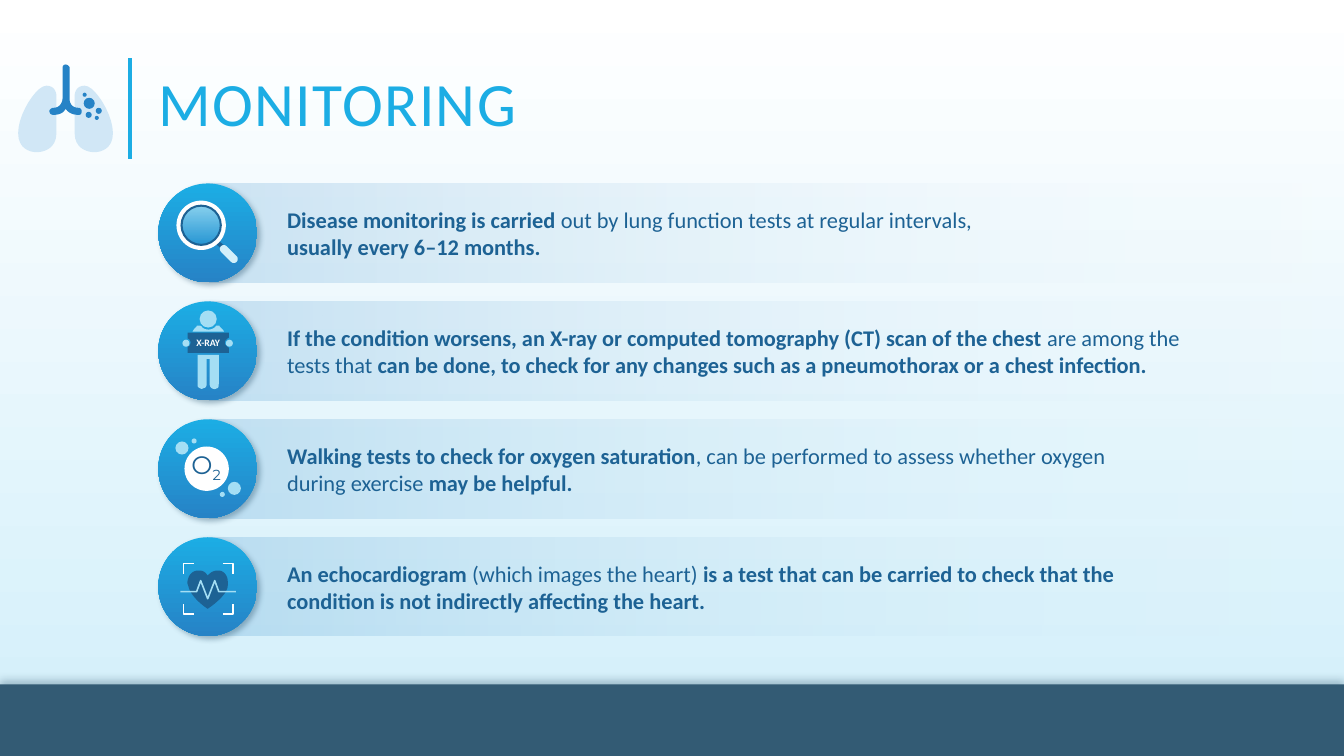
import lxml.etree
import pptx
import pptx.dml.color
import pptx.enum.shapes
import pptx.enum.text
import pptx.oxml.ns
import pptx.util

RGBColor = pptx.dml.color.RGBColor
Inches = pptx.util.Inches
Pt = pptx.util.Pt
KIND = pptx.enum.shapes.MSO_SHAPE
ALIGN = pptx.enum.text.PP_ALIGN
qn = pptx.oxml.ns.qn

WHITE = RGBColor(0xFF, 0xFF, 0xFF)
PALE = RGBColor(0xD2, 0xEF, 0xFA)
MIST = RGBColor(0xD1, 0xE7, 0xF6)
LIGHT = RGBColor(0xA4, 0xDE, 0xF4)
CYAN = RGBColor(0x1C, 0xAD, 0xE4)
BLUE = RGBColor(0x26, 0x83, 0xC6)
NAVY = RGBColor(0x1D, 0x62, 0x94)
SLATE = RGBColor(0x33, 0x5B, 0x74)

TITLE = "MONITORING"
ROWS = [
    (7.07, ["Disease monitoring is carried ",
            "out by lung function tests at regular intervals, ",
            "usually every 6–12 months."]),
    (9.46, ["If the condition worsens, an X-ray or computed tomography (CT) scan of the chest ",
            "are among the tests that",
            " can be done, to check for any changes such as a pneumothorax or a chest infection."]),
    (8.33, ["Walking tests to check for oxygen saturation",
            ", can be performed to assess whether oxygen during exercise ",
            "may be helpful."]),
    (8.98, ["An echocardiogram ",
            "(which images the heart) ",
            "is a test that can be carried to check that the condition is not indirectly affecting the heart."]),
]

LUNG = [(0.56, 0.95), (0.56, 0.95, 0.56, 0.85, 0.46, 0.85), (0.36, 0.85, 0.18, 1.13, 0.18, 1.32),
        (0.18, 1.52, 0.37, 1.51, 0.37, 1.51), (0.37, 1.51, 0.56, 1.51, 0.56, 1.32)]
PIPE = [(0.53, 1.07), (0.61, 1.07, 0.62, 0.99, 0.62, 0.98), (0.62, 0.67),
        (0.62, 0.66, 0.63, 0.64, 0.65, 0.64), (0.67, 0.64, 0.69, 0.66, 0.69, 0.67), (0.69, 0.98),
        (0.69, 0.99, 0.69, 1.07, 0.78, 1.07), (0.8, 1.07, 0.81, 1.09, 0.81, 1.1),
        (0.81, 1.13, 0.8, 1.14, 0.78, 1.14), (0.72, 1.14, 0.68, 1.12, 0.65, 1.08),
        (0.63, 1.12, 0.59, 1.14, 0.53, 1.14), (0.51, 1.14, 0.49, 1.13, 0.49, 1.1),
        (0.49, 1.09, 0.51, 1.07, 0.53, 1.07)]
HEART = [(2.06, 6.04), (2.15, 5.98, 2.21, 5.92, 2.24, 5.87), (2.25, 5.85),
         (2.26, 5.83, 2.26, 5.81, 2.26, 5.79), (2.26, 5.77), (2.26, 5.7, 2.21, 5.66, 2.17, 5.66),
         (2.11, 5.66, 2.09, 5.68, 2.06, 5.71), (2.04, 5.68, 2.02, 5.66, 1.97, 5.66),
         (1.91, 5.66, 1.87, 5.7, 1.86, 5.77), (1.86, 5.79), (1.87, 5.81, 1.87, 5.83, 1.88, 5.85),
         (1.89, 5.87), (1.92, 5.92, 1.97, 5.98, 2.06, 6.04)]
PULSE = [(1.79, 5.87), (1.95, 5.87), (1.99, 5.76), (2.06, 5.94), (2.13, 5.76), (2.17, 5.87), (2.34, 5.87)]
SIGN = [(2.27, 3.35), (2.27, 3.3), (1.86, 3.3), (1.86, 3.36), (1.88, 3.36, 1.89, 3.38, 1.89, 3.4),
        (1.89, 3.42, 1.88, 3.44, 1.86, 3.44), (1.86, 3.5), (2.27, 3.5), (2.27, 3.45),
        (2.25, 3.44, 2.23, 3.42, 2.23, 3.4), (2.23, 3.38, 2.25, 3.36, 2.27, 3.35)]
CHEST = [(2.22, 3.29), (2.22, 3.28, 2.21, 3.27, 2.2, 3.26), (2.18, 3.24),
         (2.18, 3.23, 2.17, 3.23, 2.16, 3.23), (2.15, 3.23, 2.14, 3.23, 2.14, 3.24),
         (2.12, 3.26, 2.09, 3.27, 2.07, 3.27), (2.04, 3.27, 2.01, 3.26, 2, 3.24),
         (1.99, 3.23, 1.98, 3.23, 1.97, 3.23), (1.96, 3.23, 1.95, 3.23, 1.95, 3.24),
         (1.93, 3.26, 1.92, 3.27, 1.91, 3.29)]
LEGS = [(2.17, 3.59), (2.17, 3.52), (1.96, 3.52), (1.96, 3.82), (1.96, 3.83, 1.96, 3.84, 1.98, 3.85),
        (1.99, 3.86, 2.01, 3.86, 2.02, 3.85), (2.04, 3.85, 2.05, 3.83, 2.05, 3.81), (2.05, 3.56),
        (2.08, 3.56), (2.08, 3.81), (2.08, 3.84, 2.1, 3.86, 2.13, 3.86),
        (2.14, 3.86, 2.15, 3.85, 2.16, 3.85), (2.17, 3.84, 2.17, 3.82, 2.17, 3.81)]
STEM = [(2.23, 2.44), (2.2, 2.47), (2.14, 2.42), (2.17, 2.39)]
GERMS = [(0.83, 0.97, 0.11), (0.95, 1.07, 0.06), (0.85, 1.11, 0.06), (0.82, 0.92, 0.04), (0.94, 1.15, 0.04)]
DROPS = [(1.74, 4.38, 0.13), (2.26, 4.78, 0.13), (1.9, 4.35, 0.05), (2.18, 4.88, 0.05)]
BODY = [(1.98, 3.08, 0.17), (1.81, 3.37, 0.07), (2.24, 3.37, 0.07)]

deck = pptx.Presentation()
deck.slide_width, deck.slide_height = Inches(13.33), Inches(7.5)
slide = deck.slides.add_slide(deck.slide_layouts[6])
shapes = slide.shapes


def blend(fill, stops, angle):
    fill.gradient()
    fill.gradient_angle = angle
    for stop, (color, _) in zip(fill.gradient_stops, stops):
        stop.color.rgb = color


def paint(shape, fill=None, line=None, turn=270, glow=None):
    shape.shadow.inherit = False
    props = shape._element.spPr
    if fill is None:
        shape.fill.background()
    elif isinstance(fill, list):
        blend(shape.fill, fill, turn)
        for tint, (_, alpha) in zip(props.iter(qn("a:srgbClr")), fill):
            lxml.etree.SubElement(tint, qn("a:alpha"), val=str(alpha * 1000))
    else:
        shape.fill.solid()
        shape.fill.fore_color.rgb = fill
    if line:
        shape.line.color.rgb = line
        shape.line.width = Pt(1.13)
    else:
        shape.line.fill.background()
    if glow:
        blur, dist, angle = glow
        cast = lxml.etree.SubElement(props.find(qn("a:effectLst")), qn("a:outerShdw"),
                                     blurRad=str(Pt(blur)), dist=str(Pt(dist)),
                                     dir=str(angle * 60000), algn="ctr", rotWithShape="0")
        tint = lxml.etree.SubElement(cast, qn("a:srgbClr"), val=str(SLATE))
        lxml.etree.SubElement(tint, qn("a:alpha"), val="40000")
    return shape


def block(kind, x, y, w, h, **look):
    return paint(shapes.add_shape(kind, Inches(x), Inches(y), Inches(w), Inches(h)), **look)


def dots(items, color):
    for x, y, size in items:
        block(KIND.OVAL, x, y, size, size, fill=color)


def trace(steps, close=True, **look):
    spots = [steps[0]]
    for step in steps[1:]:
        if len(step) == 2:
            spots.append(step)
            continue
        a, b, c, d = spots[-1], step[:2], step[2:4], step[4:]
        for t in [n / 10 for n in range(1, 11)]:
            u = 1 - t
            spots.append(tuple(u**3 * a[i] + 3 * u*u*t * b[i] + 3 * u*t*t * c[i] + t**3 * d[i]
                               for i in (0, 1)))
    spots = [(Inches(x), Inches(y)) for x, y in spots]
    form = shapes.build_freeform(*spots[0])
    form.add_line_segments(spots[1:], close=close)
    return paint(form.convert_to_shape(), **look)


def write(runs, shape=None, box=None, size=16, face="Calibri", color=NAVY, align=ALIGN.LEFT,
          side=0.1, edge=0.05, space=None, track=None):
    shape = shape or shapes.add_textbox(*map(Inches, box))
    frame = shape.text_frame
    frame.word_wrap = True
    frame.vertical_anchor = pptx.enum.text.MSO_ANCHOR.MIDDLE
    frame.margin_left = frame.margin_right = Inches(side)
    frame.margin_top = frame.margin_bottom = Inches(edge)
    para = frame.paragraphs[0]
    para.alignment = align
    para.line_spacing = space
    for words, bold, base in runs:
        run = para.add_run()
        run.text = words
        font = run.font
        font.size, font.name, font.bold = Pt(size), face, bold
        font.color.rgb = color
        if base:
            run._r.get_or_add_rPr().set("baseline", str(base))
        if track:
            run._r.get_or_add_rPr().set("spc", str(track))


blend(slide.background.fill, [(WHITE, 100), (PALE, 100)], 270)
block(KIND.RECTANGLE, 0, 6.79, 13.33, 0.71, fill=SLATE, glow=(6, 3, 270))
rule = shapes.add_connector(pptx.enum.shapes.MSO_CONNECTOR.STRAIGHT,
                            Inches(1.29), Inches(0.58), Inches(1.29), Inches(1.58))
rule.line.color.rgb = CYAN
rule.line.width = Pt(2.5)
lxml.etree.SubElement(rule._element.spPr, qn("a:effectLst"))

trace(LUNG, fill=MIST)
trace([tuple(v if i % 2 else 1.3 - v for i, v in enumerate(step)) for step in LUNG], fill=MIST)
trace(PIPE, fill=BLUE)
dots(GERMS, BLUE)
write([(TITLE, False, 0)], box=(1.57, 0.58, 10.63, 1), size=44, color=CYAN,
      side=0, edge=0, space=0.8, track=100)

for i, (width, parts) in enumerate(ROWS):
    top = 1.82 + 1.17 * i
    block(KIND.RECTANGLE, 2.08, top, 11.25, 0.98, fill=[(BLUE, 20), (WHITE, 0)], turn=0)
    block(KIND.OVAL, 1.57, top, 0.98, 0.98, fill=[(CYAN, 100), (BLUE, 100)], glow=(4, 3, 45))
    write([(part, n % 2 == 0, 0) for n, part in enumerate(parts)], box=(2.75, top + 0.17, width, 0.64))

trace(STEM, fill=NAVY)
block(KIND.OVAL, 1.79, 2.03, 0.41, 0.41, fill=[(WHITE, 50), (WHITE, 0)])
for x, y, size, thick, color in [(1.75, 1.99, 0.49, 0.1, WHITE), (1.79, 2.03, 0.41, 0.05, NAVY)]:
    block(KIND.DONUT, x, y, size, size, fill=color).adjustments[0] = thick
grip = block(KIND.ROUNDED_RECTANGLE, 2.23, 2.41, 0.08, 0.22, fill=PALE)
grip.adjustments[0] = 0.5
grip.rotation = 315

dots(BODY, LIGHT)
sign = trace(SIGN, fill=NAVY)
write([("X-RAY", True, 0)], shape=sign, size=7, color=WHITE, align=ALIGN.CENTER, side=0)
trace(CHEST, fill=LIGHT)
trace(LEGS, fill=LIGHT)

dots([(1.83, 4.43, 0.44)], WHITE)
dots(DROPS, LIGHT)
write([("O", False, 0), ("2", False, -25000)], box=(1.77, 4.43, 0.55, 0.4), size=18,
      face="Montserrat", align=ALIGN.CENTER)

trace(HEART, fill=NAVY)
trace(PULSE, close=False, line=LIGHT)
for x, dx in [(1.82, 0.1), (2.31, -0.1)]:
    for y, dy in [(5.59, 0.1), (6.09, -0.1)]:
        trace([(x + dx, y), (x, y), (x, y + dy)], close=False, line=WHITE)

deck.save("out.pptx")
